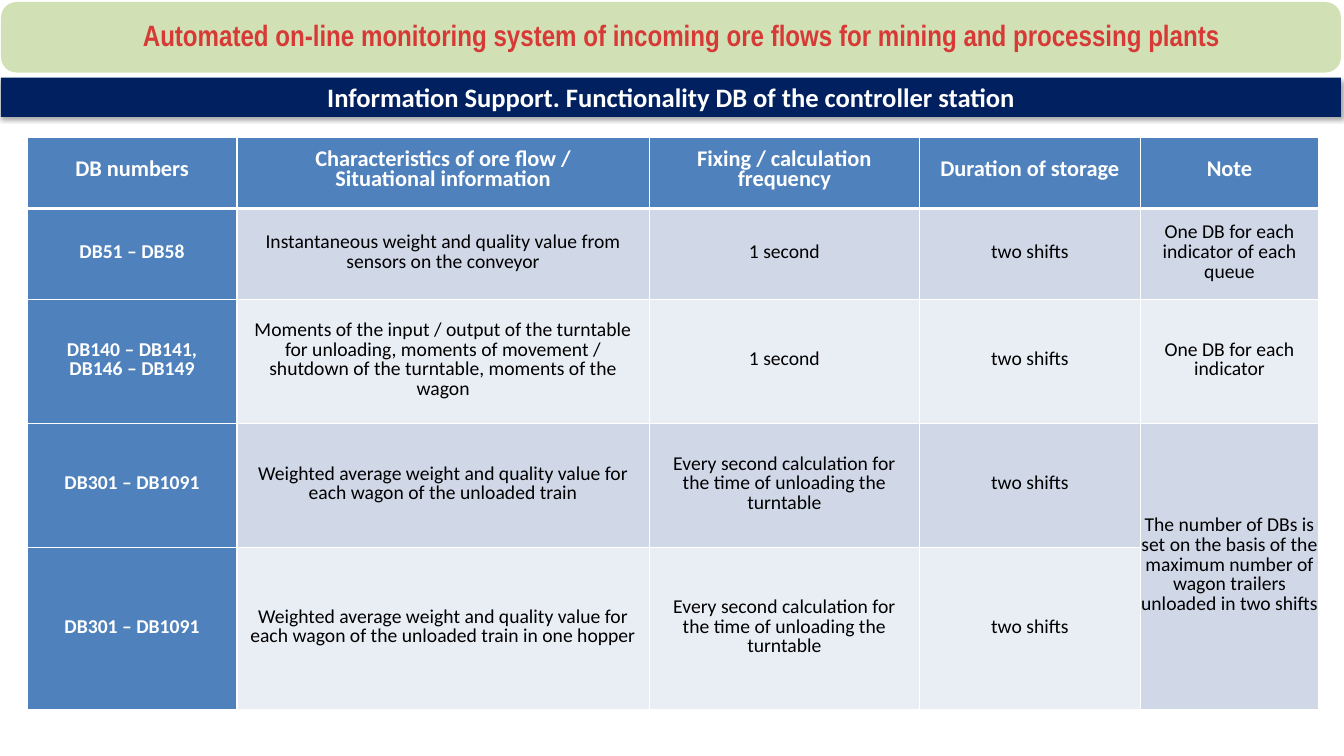
"""Build the slide on the database functionality of the controller station."""
from dataclasses import dataclass

from lxml.etree import SubElement
from pptx import Presentation
from pptx.dml.color import RGBColor as RGB
from pptx.enum.shapes import MSO_SHAPE as SHAPE
from pptx.enum.text import MSO_ANCHOR as ANCHOR, MSO_AUTO_SIZE as AUTO, PP_ALIGN as ALIGN
from pptx.oxml.ns import qn
from pptx.util import Emu, Pt


@dataclass(frozen=True)
class Theme:
    title_font: str = "Arial Narrow"
    font: str = "Calibri"
    title: str = "D73A36"
    panel: str = "D2E1B5"
    navy: str = "002060"
    blue: str = "4F81BD"
    dark_band: str = "D0D8E8"
    light_band: str = "E9EDF4"
    white: str = "FFFFFF"
    black: str = "000000"
    title_size: int = 21
    subtitle_size: int = 19
    header_size: int = 16
    body_size: int = 14
    line_pitch: int = 14


@dataclass(frozen=True)
class Box:
    left: int
    top: int
    width: int
    height: int


@dataclass(frozen=True)
class TextStyle:
    font: str
    size: int
    color: str
    bold: bool
    spacing: object = None


@dataclass(frozen=True)
class Banner:
    box: Box
    fill: str
    corner: float


THEME = Theme()
EMU_PER_PX = 9144
TITLE_BOX = Box(1, 2, 1329, 70)
SUBTITLE_BOX = Box(1, 77, 1329, 39)
TABLE_BOX = Box(27, 136, 1281, 568)
COLUMNS = (208, 409, 268, 219, 177)
ROWS = (71, 90, 123, 123, 161)
TURNTABLE = "Every second calculation for the time of unloading the turntable"
CELLS = (
    ("DB numbers", "Characteristics of ore flow /\vSituational information",
     "Fixing / calculation frequency", "Duration of storage", "Note"),
    ("DB51 – DB58", "Instantaneous weight and quality value from sensors on the conveyor",
     "1 second", "two shifts", "One DB for each indicator of each queue"),
    ("DB140 – DB141,\nDB146 – DB149",
     "Moments of the input / output of the turntable for unloading, moments of movement / "
     "shutdown of the turntable, moments of the wagon",
     "1 second", "two shifts", "One DB for each indicator"),
    ("DB301 – DB1091",
     "Weighted average weight and quality value for each wagon of the unloaded train",
     TURNTABLE, "two shifts",
     "The number of DBs is set on the basis of the maximum number of wagon trailers "
     "unloaded in two shifts"),
    ("DB301 – DB1091",
     "Weighted average weight and quality value for each wagon of the unloaded train "
     "in one hopper",
     TURNTABLE, "two shifts", ""),
)


def px(n: int) -> Emu:
    return Emu(n * EMU_PER_PX)


def place(box: Box) -> tuple:
    return px(box.left), px(box.top), px(box.width), px(box.height)


def set_margins(target, left: int, top: int, right: int, bottom: int) -> None:
    target.margin_left, target.margin_top = px(left), px(top)
    target.margin_right, target.margin_bottom = px(right), px(bottom)


def write(tf, text: str, style: TextStyle) -> None:
    tf.text = text
    for p in tf.paragraphs:
        p.alignment = ALIGN.CENTER
        if style.spacing:
            p.line_spacing = style.spacing
        for r in p.runs:
            r.font.name = style.font
            r.font.size = Pt(style.size)
            r.font.bold = style.bold
            r.font.color.rgb = RGB.from_string(style.color)


def add_banner(s, banner: Banner):
    sp = s.shapes.add_shape(SHAPE.ROUNDED_RECTANGLE, *place(banner.box))
    sp.adjustments[0] = banner.corner
    sp.shadow.inherit = False
    sp.fill.solid()
    sp.fill.fore_color.rgb = RGB.from_string(banner.fill)
    sp.line.fill.background()
    return sp


def add_shadow(sp) -> None:
    effects = sp.element.spPr.find(qn("a:effectLst"))
    shadow = SubElement(effects, qn("a:outerShdw"), blurRad=str(Pt(3.1)),
                        dist=str(Pt(1.8)), dir="5400000", rotWithShape="0")
    color = SubElement(shadow, qn("a:srgbClr"), val=THEME.black)
    SubElement(color, qn("a:alpha"), val="35000")


def add_title(s) -> None:
    add_banner(s, Banner(TITLE_BOX, THEME.panel, 0.22))
    title = s.shapes.title
    s.shapes.element.append(title.element)
    title.left, title.top, title.width, title.height = place(TITLE_BOX)
    tf = title.text_frame
    tf.word_wrap = True
    tf.auto_size = AUTO.NONE
    tf.vertical_anchor = ANCHOR.MIDDLE
    set_margins(tf, 33, 12, 12, 12)
    write(tf, "Automated on-line monitoring system of incoming ore flows for mining and "
          "processing plants",
          TextStyle(THEME.title_font, THEME.title_size, THEME.title, True, 0.9))


def add_subtitle(s) -> None:
    sp = add_banner(s, Banner(SUBTITLE_BOX, THEME.navy, 0))
    add_shadow(sp)
    tf = sp.text_frame
    tf.word_wrap = True
    tf.vertical_anchor = ANCHOR.MIDDLE
    set_margins(tf, 12, 6, 12, 6)
    write(tf, "Information Support. Functionality DB of the controller station",
          TextStyle(THEME.font, THEME.subtitle_size, THEME.white, True))


def set_borders(cell, row: int) -> None:
    widths = {"L": 1, "R": 1, "T": 3 if row == 1 else 1, "B": 3 if row == 0 else 1}
    tc_pr = cell._tc.get_or_add_tcPr()
    for side, width in widths.items():
        ln = SubElement(tc_pr, qn(f"a:ln{side}"), w=str(Pt(width)))
        SubElement(SubElement(ln, qn("a:solidFill")), qn("a:srgbClr"), val=THEME.white)


def format_cell(cell, row: int, col: int, text: str) -> None:
    is_label = row == 0 or col == 0
    band = THEME.dark_band if row % 2 else THEME.light_band
    set_borders(cell, row)
    cell.fill.solid()
    cell.fill.fore_color.rgb = RGB.from_string(THEME.blue if is_label else band)
    cell.vertical_anchor = ANCHOR.MIDDLE
    side = 0 if cell.is_merge_origin else 10
    set_margins(cell, side, 0, side, 0)
    size = THEME.body_size if row else THEME.header_size
    color = THEME.white if is_label else THEME.black
    write(cell.text_frame, text,
          TextStyle(THEME.font, size, color, is_label, Pt(THEME.line_pitch)))


def add_database_table(s) -> None:
    table = s.shapes.add_table(len(ROWS), len(COLUMNS), *place(TABLE_BOX)).table
    for column, width in zip(table.columns, COLUMNS):
        column.width = px(width)
    for row, height in zip(table.rows, ROWS):
        row.height = px(height)
    table.cell(3, 4).merge(table.cell(4, 4))
    for i, texts in enumerate(CELLS):
        for j, text in enumerate(texts):
            format_cell(table.cell(i, j), i, j, text)


def main() -> None:
    prs = Presentation()
    prs.slide_width, prs.slide_height = px(1333), px(750)
    s = prs.slides.add_slide(prs.slide_layouts[5])
    add_database_table(s)
    add_subtitle(s)
    add_title(s)
    prs.save("out.pptx")


if __name__ == "__main__":
    main()
